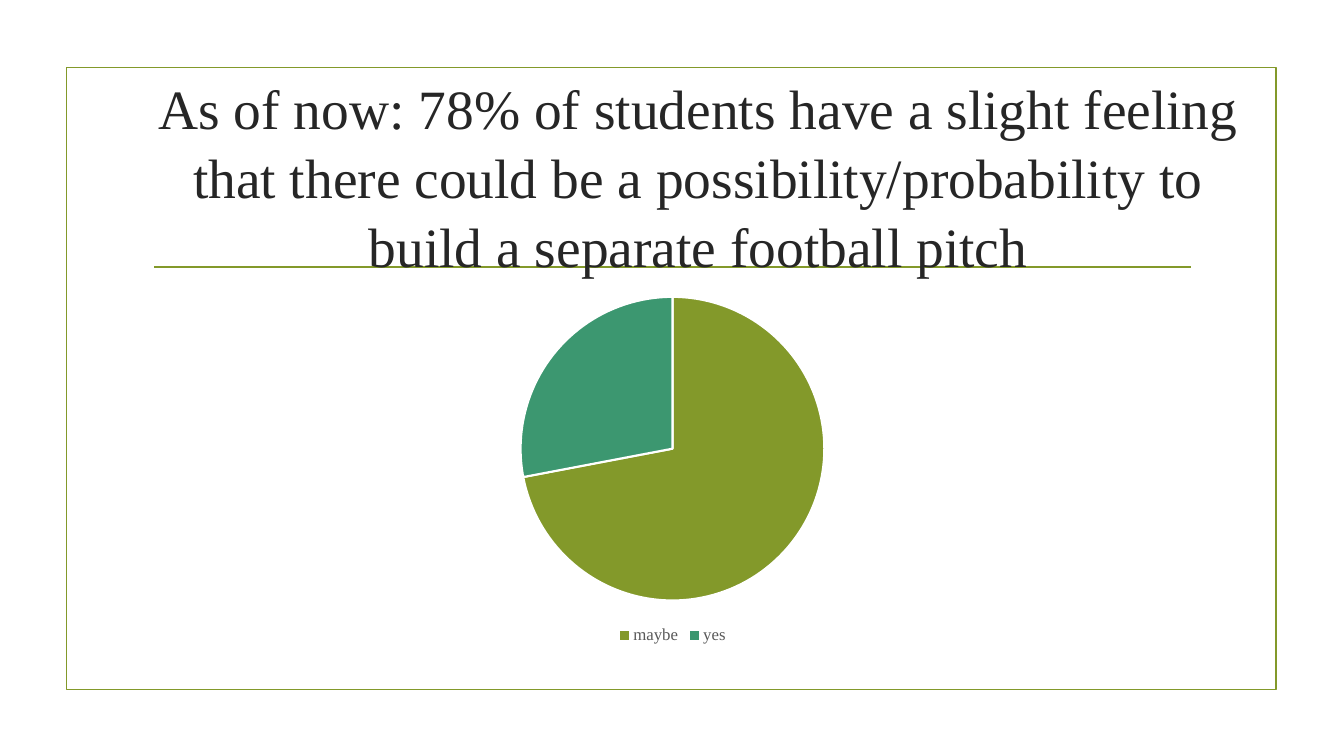
from lxml import etree
from pptx import Presentation
from pptx import util as u
from pptx.chart import data as chart_data
from pptx.dml.color import RGBColor
from pptx.enum import chart as chart_enum, shapes, text
from pptx.oxml import parse_xml
from pptx.oxml.ns import nsdecls, qn

COLORS = {"olive": "83992A", "green": "3C9770", "ink": "262626",
          "gray": "595959", "white": "FFFFFF"}
COLORS = {name: RGBColor.from_string(value) for name, value in COLORS.items()}
FONT = "Times New Roman"

deck = Presentation()
deck.slide_width, deck.slide_height = u.Inches(13.33), u.Inches(7.5)
page = deck.slides.add_slide(deck.slide_layouts[6])

# Frame and divider
frame = page.shapes.add_shape(shapes.MSO_SHAPE.RECTANGLE, u.Inches(0.66),
                              u.Inches(0.67), u.Inches(12), u.Inches(6.17))
frame.shadow.inherit = False
frame.fill.background()
divider = page.shapes.add_connector(shapes.MSO_CONNECTOR.STRAIGHT, u.Inches(1.53),
                                    u.Inches(2.65), u.Inches(11.81), u.Inches(2.65))
etree.SubElement(divider._element.spPr, qn("a:effectLst"))
for rule in (frame, divider):
    rule.line.color.rgb = COLORS["olive"]
    rule.line.width = u.Pt(1.25)
# The effect list has to follow the line properties
divider._element.spPr.append(divider._element.spPr.find(qn("a:effectLst")))

# Title
title = page.shapes.add_textbox(u.Inches(1.42), u.Inches(0.67),
                                u.Inches(11.01), u.Inches(2.13))
title.text_frame.word_wrap = True
title.text_frame.vertical_anchor = text.MSO_ANCHOR.MIDDLE
title.text_frame.text = ("As of now: 78% of students have a slight feeling that there could "
                         "be a possibility/probability to build a separate football pitch")
para = title.text_frame.paragraphs[0]
para.alignment = text.PP_ALIGN.CENTER
para.line_spacing = 1.04
span = para.runs[0]
span.font.name = FONT
span.font.size = u.Pt(39.6)
span.font.color.rgb = COLORS["ink"]

# Pie chart
answers = chart_data.CategoryChartData()
answers.categories = ["maybe", "yes"]
answers.add_series("Series 1", (72, 28))
pie = page.shapes.add_chart(chart_enum.XL_CHART_TYPE.PIE, u.Inches(1.42), u.Inches(2.8),
                            u.Inches(10.5), u.Inches(3.63), answers).chart
pie.has_title = False
pie.font.name = FONT
pie.font.size = u.Pt(10)
pie.plots[0].vary_by_categories = True
for index, color in enumerate(("olive", "green")):
    point = pie.plots[0].series[0].points[index]
    point.format.fill.solid()
    point.format.fill.fore_color.rgb = COLORS[color]
    point.format.line.color.rgb = COLORS["white"]
    point.format.line.width = u.Pt(1.5)

# Legend
pie.has_legend = True
pie.legend.position = chart_enum.XL_LEGEND_POSITION.BOTTOM
pie.legend.include_in_layout = False
pie.legend.font.name = FONT
pie.legend.font.size = u.Pt(12)
pie.legend.font.color.rgb = COLORS["gray"]

# Plot area layout, as fractions of the chart
plot_area = pie._chartSpace.chart.plotArea
for layout in plot_area.findall(qn("c:layout")):
    plot_area.remove(layout)
bounds = "".join(f'<c:{key} val="{value}"/>' for key, value in (
    ("layoutTarget", "inner"), ("xMode", "edge"), ("yMode", "edge"),
    ("x", 0.35), ("y", 0.04), ("w", 0.3), ("h", 0.83)))
plot_area.insert(0, parse_xml(
    f'<c:layout {nsdecls("c")}><c:manualLayout>{bounds}</c:manualLayout></c:layout>'))

deck.save("out.pptx")
